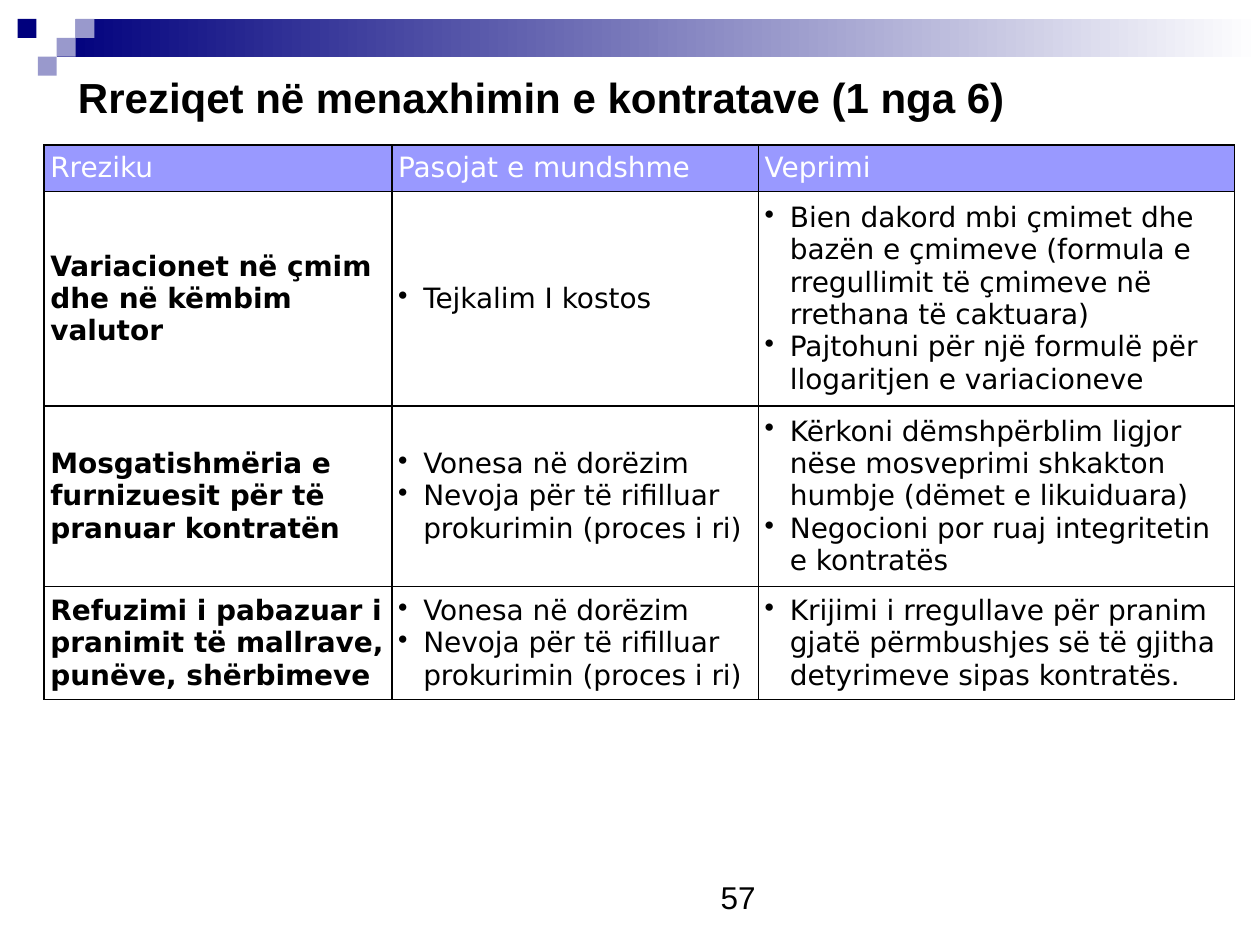
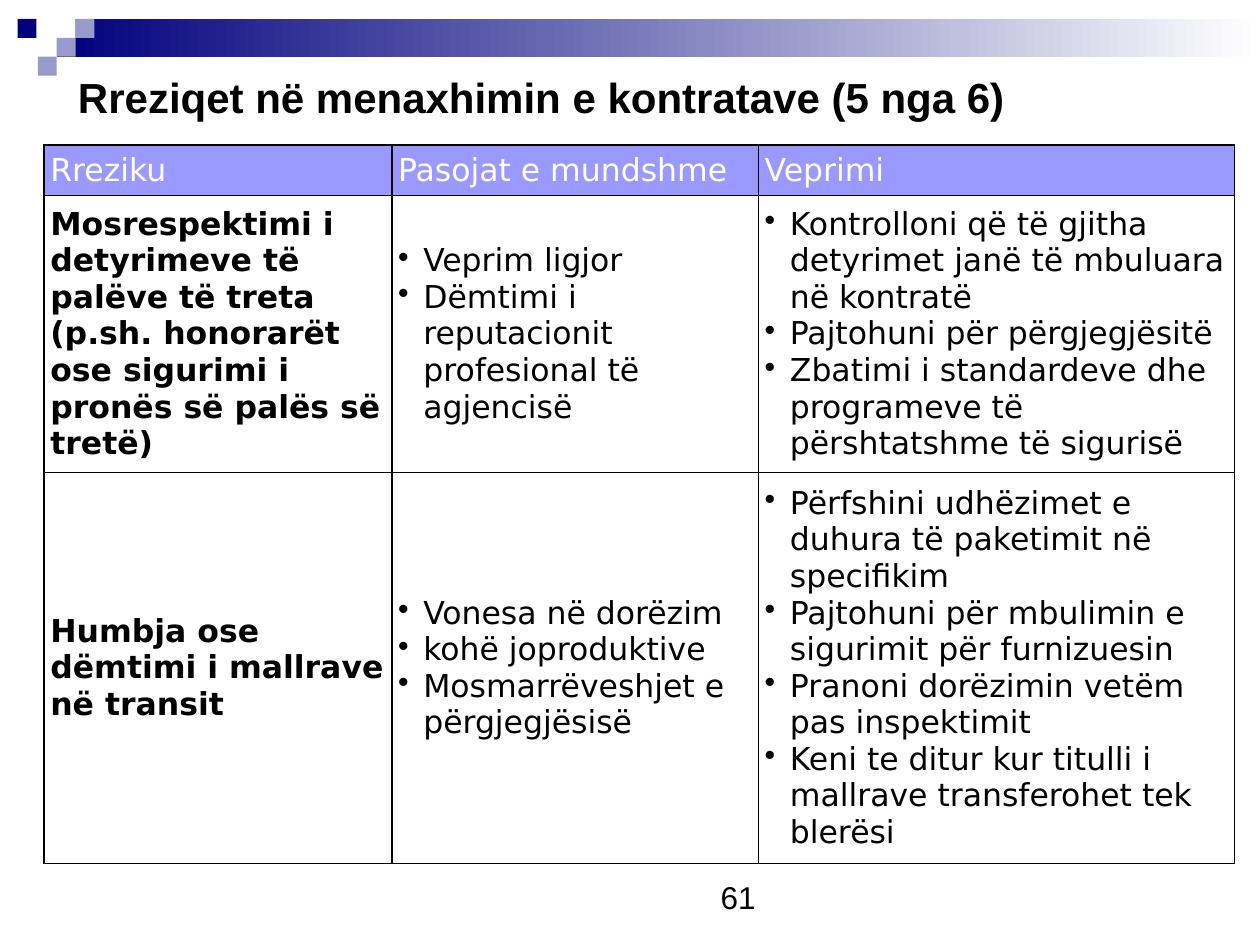
from pptx import Presentation
from pptx.dml.color import RGBColor
from pptx.enum.shapes import MSO_SHAPE
from pptx.enum.text import MSO_ANCHOR
from pptx.oxml import parse_xml
from pptx.oxml.ns import nsdecls
from pptx.util import Inches, Pt

NAVY = RGBColor(0x00, 0x00, 0x7D)
LAVENDER = RGBColor(0x99, 0x99, 0xCC)
PERIWINKLE = RGBColor(0x99, 0x99, 0xFF)
WHITE = RGBColor(0xFF, 0xFF, 0xFF)
BLACK = RGBColor(0x00, 0x00, 0x00)

# All lengths are counted in square grid cells.
CELL = Inches(0.15)
SLIDE_COLS, SLIDE_ROWS = 66.67, 50
BAND_LEFT = 3
CORNER_SQUARES = [
    (3, 1, WHITE), (4, 1, LAVENDER), (0.93, 1, NAVY),
    (3, 2, LAVENDER), (2, 3, LAVENDER),
]

TITLE_BOX = (3.47, 3.47, 60.87, 3.33)
NUMBER_BOX = (37.47, 46.13, 4.27, 2.67)
TABLE_LEFT, TABLE_TOP = 2.33, 7.67
COLUMN_WIDTHS = (18.4, 19.4, 25.2)
CELL_MARGIN = Inches(0.05)
BULLET_INDENT = Inches(0.2)
TITLE_FORMAT = {"name": "Arial", "size": Pt(24), "bold": True}
NUMBER_FORMAT = {"name": "Arial", "size": Pt(18), "bold": False}

HEADINGS = ("Rreziku", "Pasojat e mundshme", "Veprimi")
LATE_DELIVERY = "Vonesa në dorëzim"
NEW_PROCUREMENT = "Nevoja për të rifilluar prokurimin (proces i ri)"

SLIDES = [
    {
        "part": 1, "number": 57, "size": Pt(16),
        "heights": (2.47, 11.33, 9.53, 6),
        "risks": [
            ("Variacionet në çmim dhe në këmbim valutor",
             ["Tejkalim I kostos"],
             ["Bien dakord mbi çmimet dhe bazën e çmimeve (formula e "
              "rregullimit të çmimeve në rrethana të caktuara)",
              "Pajtohuni për një formulë për llogaritjen e variacioneve"]),
            ("Mosgatishmëria e furnizuesit për të pranuar kontratën",
             [LATE_DELIVERY, NEW_PROCUREMENT],
             ["Kërkoni dëmshpërblim ligjor nëse mosveprimi shkakton humbje "
              "(dëmet e likuiduara)",
              "Negocioni por ruaj integritetin e kontratës"]),
            ("Refuzimi i pabazuar i pranimit të mallrave, punëve, shërbimeve",
             [LATE_DELIVERY, NEW_PROCUREMENT],
             ["Krijimi i rregullave për pranim gjatë përmbushjes së të gjitha "
              "detyrimeve sipas kontratës."]),
        ],
    },
    {
        "part": 5, "number": 61, "size": Pt(18),
        "heights": (2.67, 14.67, 20.67),
        "risks": [
            ("Mosrespektimi i detyrimeve të palëve të treta (p.sh. honorarët "
             "ose sigurimi i pronës së palës së tretë)",
             ["Veprim ligjor",
              "Dëmtimi i reputacionit profesional të agjencisë"],
             ["Kontrolloni që të gjitha detyrimet janë të mbuluara në kontratë",
              "Pajtohuni për përgjegjësitë",
              "Zbatimi i standardeve dhe programeve të përshtatshme të sigurisë"]),
            ("Humbja ose dëmtimi i mallrave në transit",
             [LATE_DELIVERY, "kohë joproduktive",
              "Mosmarrëveshjet e përgjegjësisë"],
             ["Përfshini udhëzimet e duhura të paketimit në specifikim",
              "Pajtohuni për mbulimin e sigurimit për furnizuesin",
              "Pranoni dorëzimin vetëm pas inspektimit",
              "Keni te ditur kur titulli i mallrave transferohet tek blerësi"]),
        ],
    },
]


def cells(*counts):
    return [round(count * CELL) for count in counts]


def add_run(p, text, color, font_format):
    r = p.add_run()
    r.text = text
    r.font.color.rgb = color
    for name, value in font_format.items():
        setattr(r.font, name, value)


def add_text(slide, box, text, font_format, wrap=True):
    tf = slide.shapes.add_textbox(*cells(*box)).text_frame
    tf.word_wrap = wrap
    add_run(tf.paragraphs[0], text, BLACK, font_format)


def add_block(slide, *box):
    sp = slide.shapes.add_shape(MSO_SHAPE.RECTANGLE, *cells(*box))
    sp.shadow.inherit = False
    sp.line.fill.background()
    return sp


def add_band(slide):
    """Draw the fading top band and the stepped squares at its left end."""
    fill = add_block(slide, BAND_LEFT, 1, SLIDE_COLS - BAND_LEFT, 2).fill
    fill.gradient()
    fill.gradient_angle = 0
    for stop, color in zip(fill.gradient_stops, (NAVY, WHITE)):
        stop.color.rgb = color
    for col, row, color in CORNER_SQUARES:
        fill = add_block(slide, col, row, 1, 1).fill
        fill.solid()
        fill.fore_color.rgb = color


def add_bullet(p):
    pPr = p._p.get_or_add_pPr()
    pPr.set("marL", str(BULLET_INDENT))
    pPr.set("indent", str(-BULLET_INDENT))
    pPr.append(parse_xml(f'<a:buChar {nsdecls("a")} char="•"/>'))


def add_borders(cell):
    tcPr = cell._tc.get_or_add_tcPr()
    for i, side in enumerate(("lnL", "lnR", "lnT", "lnB")):
        tcPr.insert(i, parse_xml(
            f'<a:{side} {nsdecls("a")} w="{Pt(1)}"><a:solidFill>'
            f'<a:srgbClr val="{BLACK}"/></a:solidFill></a:{side}>'))


def fill_cell(cell, content, size, header):
    """Write a string as plain text, or a list as bullets."""
    cell.vertical_anchor = MSO_ANCHOR.MIDDLE
    for side in ("left", "right", "top", "bottom"):
        setattr(cell, f"margin_{side}", CELL_MARGIN)
    cell.fill.solid()
    cell.fill.fore_color.rgb = PERIWINKLE if header else WHITE
    add_borders(cell)
    bulleted = isinstance(content, list)
    font_format = {"name": "DejaVu Sans", "size": size,
                   "bold": not header and not bulleted}
    tf = cell.text_frame
    for i, text in enumerate(content if bulleted else [content]):
        p = tf.add_paragraph() if i else tf.paragraphs[0]
        if bulleted:
            add_bullet(p)
        add_run(p, text, WHITE if header else BLACK, font_format)


def add_risk_table(slide, risks, heights, size):
    rows = [HEADINGS, *risks]
    box = cells(TABLE_LEFT, TABLE_TOP, sum(COLUMN_WIDTHS), sum(heights))
    table = slide.shapes.add_table(len(rows), len(HEADINGS), *box).table
    table.horz_banding = False
    for column, width in zip(table.columns, cells(*COLUMN_WIDTHS)):
        column.width = width
    for row, height in zip(table.rows, cells(*heights)):
        row.height = height
    for i, row in enumerate(rows):
        for j, content in enumerate(row):
            fill_cell(table.cell(i, j), content, size, header=i == 0)


def main():
    prs = Presentation()
    prs.slide_width, prs.slide_height = Inches(10), Inches(7.5)
    for data in SLIDES:
        slide = prs.slides.add_slide(prs.slide_layouts[6])
        add_band(slide)
        add_text(slide, NUMBER_BOX, str(data["number"]), NUMBER_FORMAT, wrap=False)
        title = f"Rreziqet në menaxhimin e kontratave ({data['part']} nga 6)"
        add_text(slide, TITLE_BOX, title, TITLE_FORMAT)
        add_risk_table(slide, data["risks"], data["heights"], data["size"])
    prs.save("out.pptx")


if __name__ == "__main__":
    main()
